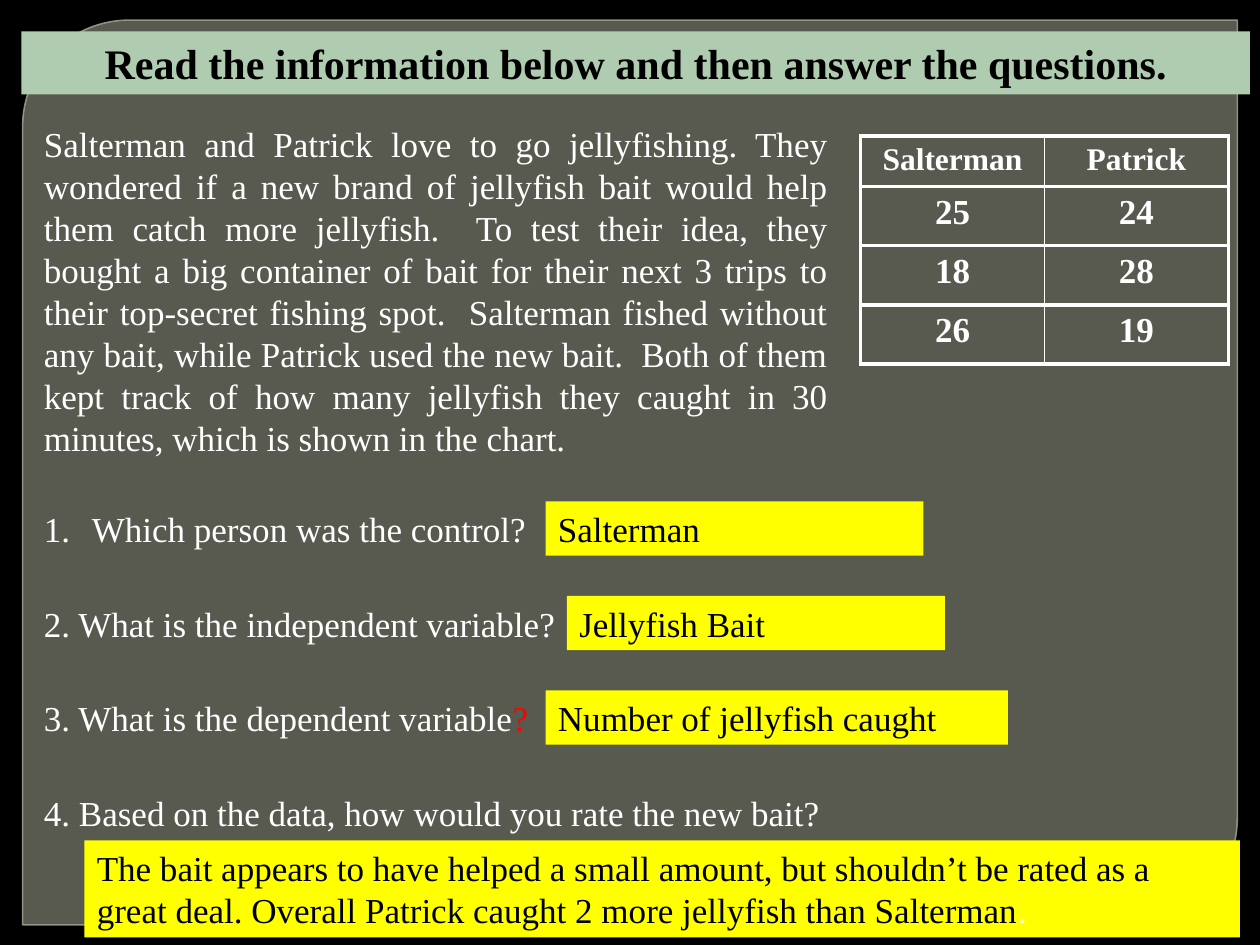
from dataclasses import dataclass

from lxml.etree import SubElement
from pptx import Presentation
from pptx.dml.color import RGBColor
from pptx.enum.shapes import MSO_SHAPE as Preset
from pptx.enum.text import MSO_ANCHOR as Anchor, PP_ALIGN as Align
from pptx.oxml import parse_xml
from pptx.oxml.ns import nsdecls, qn
from pptx.util import Inches, Pt


@dataclass(frozen=True)
class Theme:
    font: str = "Times New Roman"
    background: str = "000000"
    panel: str = "888B7B"
    panel_line: str = "9DA090"
    banner: str = "B0CCB0"
    answer: str = "FFFF00"
    light: str = "FFFFFF"
    dark: str = "000000"
    accent: str = "FF0000"
    title_size: int = 24
    body_size: int = 20
    header_size: int = 18


@dataclass(frozen=True)
class Box:
    left: float
    top: float
    width: float
    height: float

    def lengths(self):
        return [Inches(n) for n in (self.left, self.top, self.width, self.height)]


@dataclass(frozen=True)
class Run:
    text: str
    color: str
    size: int
    bold: bool = False


@dataclass(frozen=True)
class Question:
    runs: list[Run]
    width: float
    answer_box: Box
    answer: list[Run]
    numbered: bool = False


THEME = Theme()


def rgb(color: str) -> RGBColor:
    return RGBColor.from_string(color)


def light(text: str) -> Run:
    return Run(text, THEME.light, THEME.body_size)


def dark(text: str) -> Run:
    return Run(text, THEME.dark, THEME.body_size)


def write(frame, runs: list[Run], align: Align):
    frame.word_wrap = True
    paragraph = frame.paragraphs[0]
    paragraph.alignment = align
    for item in runs:
        run = paragraph.add_run()
        run.text = item.text
        run.font.name = THEME.font
        run.font.size = Pt(item.size)
        run.font.bold = item.bold
        run.font.color.rgb = rgb(item.color)
    return paragraph


def add_text(slide, box: Box, runs: list[Run]):
    shape = slide.shapes.add_textbox(*box.lengths())
    return write(shape.text_frame, runs, Align.JUSTIFY)


def add_panel(slide, box: Box) -> None:
    """Draw the translucent panel with two rounded corners."""
    shape = slide.shapes.add_shape(Preset.ROUND_2_DIAG_RECTANGLE, *box.lengths())
    shape.adjustments[0] = 0.118
    shape.adjustments[1] = 0
    shape.shadow.inherit = False
    shape.fill.solid()
    shape.fill.fore_color.rgb = rgb(THEME.panel)
    shape.line.color.rgb = rgb(THEME.panel_line)
    shape.line.width = Pt(0.87)
    colors = shape._element.spPr.iter(qn("a:srgbClr"))
    for color, percent in zip(list(colors), (65, 88)):
        SubElement(color, qn("a:alpha"), val=str(percent * 1000))


def add_filled_box(slide, box: Box, fill: str, runs: list[Run],
                   align: Align = Align.LEFT, anchor: Anchor = Anchor.TOP) -> None:
    shape = slide.shapes.add_shape(Preset.RECTANGLE, *box.lengths())
    shape.shadow.inherit = False
    shape.fill.solid()
    shape.fill.fore_color.rgb = rgb(fill)
    shape.line.fill.background()
    shape.text_frame.vertical_anchor = anchor
    write(shape.text_frame, runs, align)


def add_question(slide, top: float, question: Question) -> None:
    paragraph = add_text(slide, Box(0.25, top, question.width, 0.43), question.runs)
    properties = paragraph._p.get_or_add_pPr()
    properties.set("marL", str(Inches(0.38)))
    properties.set("indent", str(-Inches(0.38)))
    if question.numbered:
        SubElement(properties, qn("a:buFont"), typeface=THEME.font)
        SubElement(properties, qn("a:buAutoNum"), type="arabicPeriod")
    add_filled_box(slide, question.answer_box, THEME.answer, question.answer)


def set_borders(cell, widths: dict[str, float]) -> None:
    """Set cell borders; the sides must come in the order L, R, T, B."""
    properties = cell._tc.get_or_add_tcPr()
    for position, (side, width) in enumerate(widths.items()):
        properties.insert(position, parse_xml(
            f'<a:ln{side} {nsdecls("a")} w="{Pt(width)}"><a:solidFill>'
            f'<a:srgbClr val="{THEME.light}"/></a:solidFill></a:ln{side}>'))


def add_catch_table(slide, box: Box, rows: list[tuple[str, str]]) -> None:
    frame = slide.shapes.add_table(len(rows), len(rows[0]), *box.lengths())
    table = frame.table
    table.first_row = table.horz_banding = False
    outer, inner = 2.25, 1
    last = len(rows[0]) - 1
    for r, values in enumerate(rows):
        table.rows[r].height = Inches(0.47 if r else 0.4)
        size = THEME.body_size if r else THEME.header_size
        for c, value in enumerate(values):
            cell = table.cell(r, c)
            cell.fill.background()
            write(cell.text_frame, [Run(value, THEME.light, size, True)], Align.CENTER)
            set_borders(cell, {"L": inner if c else outer,
                               "R": outer if c == last else inner,
                               "T": outer, "B": outer})


STORY = (
    "Salterman and Patrick love to go jellyfishing. They wondered if a new brand of "
    "jellyfish bait would help them catch more jellyfish.  To test their idea, they "
    "bought a big container of bait for their next 3 trips to their top-secret fishing "
    "spot.  Salterman fished without any bait, while Patrick used the new bait.  Both of "
    "them kept track of how many jellyfish they caught in 30 minutes, which is shown in "
    "the chart."
)
CATCHES = [("Salterman", "Patrick"), ("25", "24"), ("18", "28"), ("26", "19")]
FIRST_TOP, STEP = 3.98, 0.75
QUESTIONS = [
    Question([light("Which person was the control?")], 9.58,
             Box(4.33, FIRST_TOP, 3, 0.43), [dark("Salterman")], numbered=True),
    Question([light("2. What is the independent variable?")], 9.58,
             Box(4.5, FIRST_TOP + STEP, 3, 0.43), [dark("Jellyfish Bait")]),
    Question([light("3. What is the dependent variable"),
              Run("?", THEME.accent, THEME.body_size)], 9.58,
             Box(4.33, FIRST_TOP + 2 * STEP, 3.67, 0.43),
             [dark("Number of jellyfish caught")]),
    Question([light("4. Based on the data, how would you rate the new bait?")], 6.92,
             Box(0.67, 6.67, 9.17, 0.77),
             [dark("The bait appears to have helped a small amount, but shouldn’t be "
                   "rated as a great deal. Overall Patrick caught 2 more jellyfish "
                   "than Salterman"), light(".")]),
]


def main() -> None:
    presentation = Presentation()
    presentation.slide_width, presentation.slide_height = Inches(10), Inches(7.5)
    slide = presentation.slides.add_slide(presentation.slide_layouts[6])
    slide.background.fill.solid()
    slide.background.fill.fore_color.rgb = rgb(THEME.background)

    add_panel(slide, Box(0.18, 0.16, 9.64, 7.18))
    title = Run("Read the information below and then answer the questions.",
                THEME.dark, THEME.title_size, True)
    add_filled_box(slide, Box(0.17, 0.25, 9.75, 0.5), THEME.banner, [title],
                   Align.CENTER, Anchor.MIDDLE)
    add_text(slide, Box(0.25, 0.92, 6.42, 2.77), [light(STORY)])
    add_catch_table(slide, Box(6.83, 1.08, 2.92, 1.81), CATCHES)
    for index, question in enumerate(QUESTIONS):
        add_question(slide, FIRST_TOP + index * STEP, question)
    presentation.save("out.pptx")


if __name__ == "__main__":
    main()
